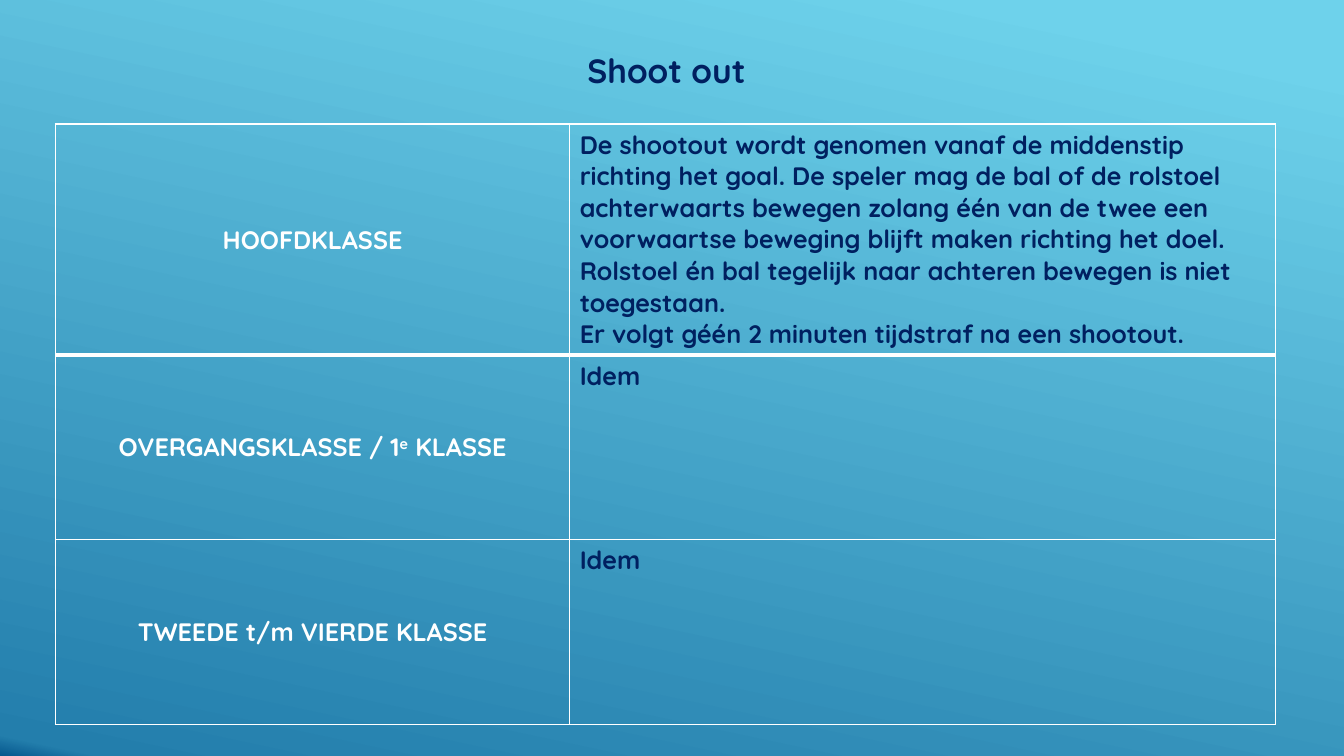
from copy import deepcopy
from dataclasses import dataclass

from lxml import etree
from pptx import Presentation
from pptx.dml.color import RGBColor
from pptx.enum.text import MSO_ANCHOR, PP_ALIGN
from pptx.oxml.ns import qn
from pptx.util import Inches, Pt

CENTER, LEFT = PP_ALIGN.CENTER, PP_ALIGN.LEFT
MIDDLE, TOP = MSO_ANCHOR.MIDDLE, MSO_ANCHOR.TOP
SLIDE_WIDTH, SLIDE_HEIGHT = Inches(13.33), Inches(7.5)
BLANK_LAYOUT = 6


@dataclass(frozen=True)
class Theme:
    """Colours, type sizes and line widths of the slide."""

    font: str = "Quicksand"
    title_size: int = 24
    body_size: int = 18
    navy: str = "002060"
    white: str = "FFFFFF"
    thin: int = 1
    thick: int = 3
    superscript: int = 30
    gradient: tuple = ((0.07, "6ED2EB"), (0.98, "237EAC"), (1, "06588E"))
    gradient_angle: int = 102


THEME = Theme()
TITLE_AREA = (31.06, 6, 37.06, 6.67)
TABLE_AREA = (4.13, 16.4, 90.77, 76.13)
COLUMN_SHARES = (38.26, 52.51)
ROW_SHARES = (27.33, 24.4, 24.4)
RULES = [
    (
        [("HOOFDKLASSE", False)],
        [
            "De shootout wordt genomen vanaf de middenstip richting het goal. "
            "De speler mag de bal of de rolstoel achterwaarts bewegen zolang één "
            "van de twee een voorwaartse beweging blijft maken richting het doel. "
            "Rolstoel én bal tegelijk naar achteren bewegen is niet toegestaan.",
            "Er volgt géén 2 minuten tijdstraf na een shootout.",
        ],
    ),
    ([("OVERGANGSKLASSE / 1", False), ("e", True), (" KLASSE", False)], ["Idem"]),
    ([("TWEEDE t/m VIERDE KLASSE", False)], ["Idem"]),
]


def across(percent):
    """Return a percentage of the slide width."""
    return round(SLIDE_WIDTH * percent / 100)


def down(percent):
    """Return a percentage of the slide height."""
    return round(SLIDE_HEIGHT * percent / 100)


def place(area):
    """Turn an area in percentages into left, top, width and height."""
    left, top, width, height = area
    return across(left), down(top), across(width), down(height)


def paint_background(slide):
    """Fill the slide background with the theme gradient."""
    fill = slide.background.fill
    fill.gradient()
    fill.gradient_angle = 360 - THEME.gradient_angle
    stop_list = next(slide.element.iter(qn("a:gsLst")))
    stop_list.append(deepcopy(stop_list[0]))
    for stop, (position, color) in zip(fill.gradient_stops, THEME.gradient):
        stop.position = position
        stop.color.rgb = RGBColor.from_string(color)


def write_paragraphs(frame, paragraphs, size, color, alignment):
    """Write paragraphs made of (text, raised) runs into a text frame."""
    for index, runs in enumerate(paragraphs):
        paragraph = frame.add_paragraph() if index else frame.paragraphs[0]
        paragraph.alignment = alignment
        for text, raised in runs:
            run = paragraph.add_run()
            run.text = text
            font = run.font
            font.name, font.size, font.bold = THEME.font, Pt(size), True
            font.color.rgb = RGBColor.from_string(color)
            if raised:
                run._r.get_or_add_rPr().set("baseline", str(THEME.superscript * 1000))


def add_title(slide, text):
    """Add the centred slide title."""
    frame = slide.shapes.add_textbox(*place(TITLE_AREA)).text_frame
    frame.word_wrap = True
    write_paragraphs(frame, [[(text, False)]], THEME.title_size, THEME.navy, CENTER)


def set_borders(cell, top, bottom):
    """Draw the four cell borders with the given top and bottom widths."""
    properties = cell._tc.get_or_add_tcPr()
    widths = {"a:lnL": THEME.thin, "a:lnR": THEME.thin, "a:lnT": top, "a:lnB": bottom}
    for tag, width in widths.items():
        line = etree.SubElement(properties, qn(tag), w=str(Pt(width)))
        fill = etree.SubElement(line, qn("a:solidFill"))
        etree.SubElement(fill, qn("a:srgbClr"), val=THEME.white)


def fill_cell(cell, paragraphs, color, alignment, anchor):
    """Write a transparent cell with its text alignment."""
    cell.fill.background()
    cell.vertical_anchor = anchor
    write_paragraphs(cell.text_frame, paragraphs, THEME.body_size, color, alignment)


def add_rules_table(slide, rules):
    """Add the table of shootout rules per class."""
    frame = slide.shapes.add_table(len(rules), len(COLUMN_SHARES), *place(TABLE_AREA))
    table = frame.table
    table.first_row = table.horz_banding = False
    for column, share in zip(table.columns, COLUMN_SHARES):
        column.width = across(share)
    for row, share in zip(table.rows, ROW_SHARES):
        row.height = down(share)
    for index, (class_runs, rule_texts) in enumerate(rules):
        class_cell, rule_cell = table.rows[index].cells
        top = THEME.thick if index == 1 else THEME.thin
        bottom = THEME.thick if index == 0 else THEME.thin
        for cell in (class_cell, rule_cell):
            set_borders(cell, top, bottom)
        fill_cell(class_cell, [class_runs], THEME.white, CENTER, MIDDLE)
        rule_paragraphs = [[(text, False)] for text in rule_texts]
        fill_cell(rule_cell, rule_paragraphs, THEME.navy, LEFT, TOP)


def main():
    """Build and save the shootout slide."""
    presentation = Presentation()
    presentation.slide_width, presentation.slide_height = SLIDE_WIDTH, SLIDE_HEIGHT
    slide = presentation.slides.add_slide(presentation.slide_layouts[BLANK_LAYOUT])
    paint_background(slide)
    add_rules_table(slide, RULES)
    add_title(slide, "Shoot out")
    presentation.save("out.pptx")


if __name__ == "__main__":
    main()
